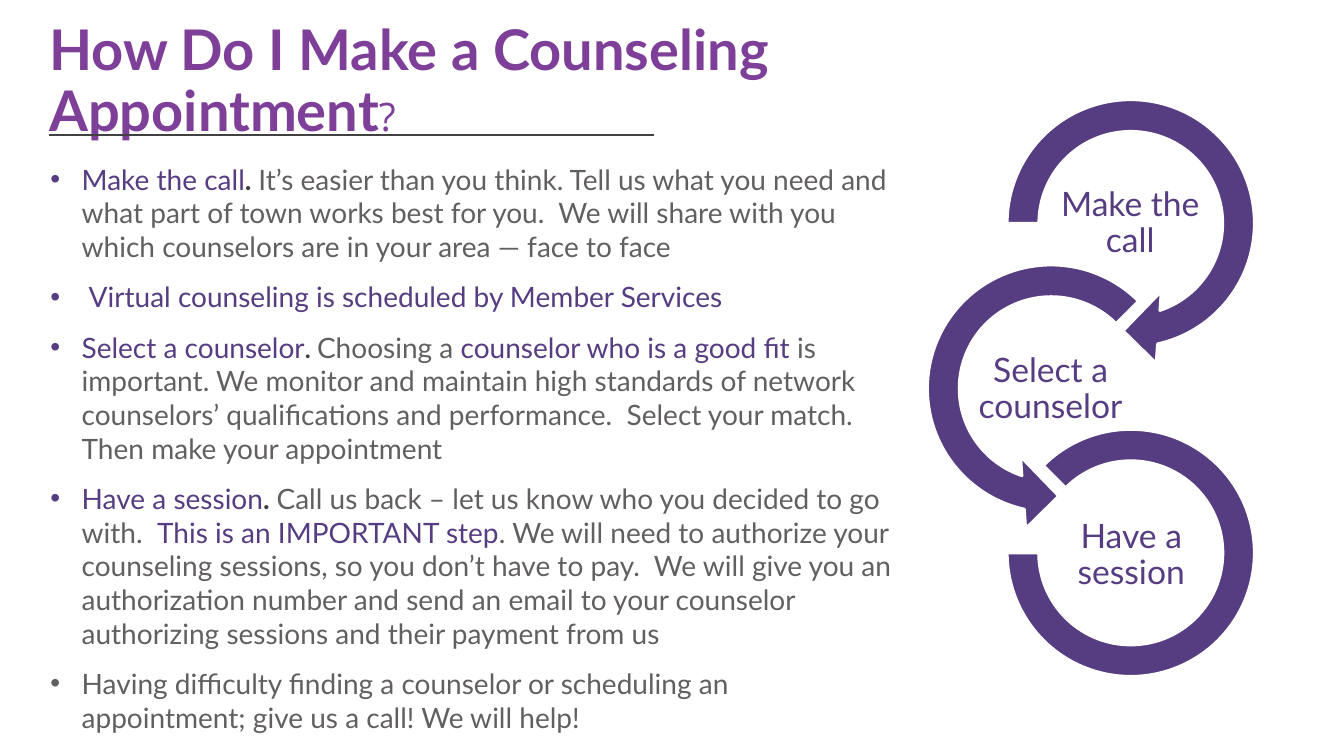
from dataclasses import dataclass

from lxml import etree
from pptx import Presentation
from pptx.dml.color import RGBColor
from pptx.enum.shapes import MSO_CONNECTOR, MSO_SHAPE
from pptx.enum.text import MSO_ANCHOR, MSO_AUTO_SIZE, PP_ALIGN
from pptx.oxml.ns import qn
from pptx.util import Inches, Pt

STRAIGHT = MSO_CONNECTOR.STRAIGHT
CIRCULAR_ARROW = MSO_SHAPE.CIRCULAR_ARROW
LEFT_CIRCULAR_ARROW = MSO_SHAPE.LEFT_CIRCULAR_ARROW
BLOCK_ARC = MSO_SHAPE.BLOCK_ARC
TOP, MIDDLE = MSO_ANCHOR.TOP, MSO_ANCHOR.MIDDLE
LEFT, CENTER = PP_ALIGN.LEFT, PP_ALIGN.CENTER
NO_AUTOFIT = MSO_AUTO_SIZE.NONE
TITLE_ONLY = 5


@dataclass(frozen=True)
class Theme:
    font: str = "Lato"
    mark_font: str = "Open Sans"
    title: RGBColor = RGBColor(0x7D, 0x3F, 0x98)
    accent: RGBColor = RGBColor(0x56, 0x3D, 0x82)
    body: RGBColor = RGBColor(0x62, 0x5F, 0x5F)
    dark: RGBColor = RGBColor(0x41, 0x41, 0x41)
    white: RGBColor = RGBColor(0xFF, 0xFF, 0xFF)
    title_size: Pt = Pt(40)
    mark_size: Pt = Pt(28)
    step_size: Pt = Pt(24)
    body_size: Pt = Pt(20)
    stop_size: Pt = Pt(18)


THEME = Theme()

# Run styles: colour, bold, size
KEY = (THEME.accent, False, THEME.body_size)
PLAIN = (THEME.body, False, THEME.body_size)
STOP = (THEME.dark, True, THEME.body_size)
SMALL_STOP = (THEME.dark, True, THEME.stop_size)

# Bullets: indent in inches, then runs of text and style
BULLETS = [
    (0.31, [
        ("Make the call", KEY), (". ", STOP),
        ("It’s easier than you think. Tell us what you need and what part of town "
         "works best for you.  We will share with you which counselors are in your "
         "area — face to face", PLAIN)]),
    (0.38, [("Virtual counseling is scheduled by Member Services", KEY)]),
    (0.31, [
        ("Select a counselor", KEY), (". ", SMALL_STOP), ("Choosing a ", PLAIN),
        ("counselor who is a good fit ", KEY),
        ("is important. We monitor and maintain high standards of network "
         "counselors’ qualifications and performance.  Select your match. Then "
         "make your appointment", PLAIN)]),
    (0.31, [
        ("Have a session", KEY), (". ", STOP),
        ("Call us back – let us know who you decided to go with.  ", PLAIN),
        ("This is an IMPORTANT step", KEY),
        (". We will need to authorize your counseling sessions, so you don’t have "
         "to pay.  We will give you an authorization number and send an email to "
         "your counselor authorizing sessions and their payment from us", PLAIN)]),
    (0.31, [("Having difficulty finding a counselor or scheduling an appointment; "
             "give us a call! We will help!", PLAIN)]),
]

# Steps: label, label left and top, ring shape, ring left, top and size, adjustments
STEPS = [
    ("Make the call", 10.42, 1.82,
     CIRCULAR_ARROW, 9.79, 0.79, 2.85, (0.11, 11.423, 45, 108, 0.125)),
    ("Select a counselor", 9.63, 3.47,
     LEFT_CIRCULAR_ARROW, 9, 2.43, 2.85, (0.11, 11.423, 63, 189, 0.125)),
    ("Have a session", 10.43, 5.12,
     BLOCK_ARC, 9.99, 4.26, 2.45, (135, 108, 0.127)),
]


def set_frame(frame, anchor, inset=0):
    frame.word_wrap = True
    frame.auto_size = NO_AUTOFIT
    frame.vertical_anchor = anchor
    frame.margin_left = frame.margin_right = Inches(inset)
    frame.margin_top = frame.margin_bottom = Inches(inset)


def add_text_box(slide, left, top, width, height, anchor, inset=0):
    box = slide.shapes.add_textbox(
        Inches(left), Inches(top), Inches(width), Inches(height))
    set_frame(box.text_frame, anchor, inset)
    return box.text_frame


def add_run(paragraph, text, font, color, bold, size):
    run = paragraph.add_run()
    run.text = text
    run.font.name = font
    run.font.color.rgb = color
    run.font.bold = bold
    run.font.size = size


def add_bullet_mark(paragraph, indent):
    properties = paragraph._p.get_or_add_pPr()
    properties.set("marL", str(Inches(indent)))
    properties.set("indent", str(-Inches(indent)))
    etree.SubElement(properties, qn("a:buFont")).set("typeface", "Arial")
    etree.SubElement(properties, qn("a:buChar")).set("char", "•")


def add_title(slide):
    title = slide.shapes.title
    title.left, title.top = Inches(0.49), Inches(0.42)
    title.width, title.height = Inches(7.76), Inches(0.8)
    set_frame(title.text_frame, MIDDLE)
    paragraph = title.text_frame.paragraphs[0]
    paragraph.alignment = LEFT
    paragraph.line_spacing = 0.9
    add_run(paragraph, "How Do I Make a Counseling Appointment",
            THEME.font, THEME.title, True, THEME.title_size)
    add_run(paragraph, "?", THEME.mark_font, THEME.title, False, THEME.mark_size)


def add_rule(slide):
    rule = slide.shapes.add_connector(
        STRAIGHT, Inches(0.49), Inches(1.34), Inches(6.49), Inches(1.34))
    rule.line.color.rgb = THEME.dark
    rule.line.width = Pt(1.5)
    etree.SubElement(rule._element.spPr, qn("a:effectLst"))


def add_bullets(slide):
    frame = add_text_box(slide, 0.5, 1.61, 8.39, 5.78, TOP)
    for index, (indent, runs) in enumerate(BULLETS):
        paragraph = frame.add_paragraph() if index else frame.paragraphs[0]
        paragraph.space_before = Pt(12)
        add_bullet_mark(paragraph, indent)
        for text, style in runs:
            add_run(paragraph, text, THEME.font, *style)


def add_ring(slide, kind, left, top, size, adjustments):
    ring = slide.shapes.add_shape(
        kind, Inches(left), Inches(top), Inches(size), Inches(size))
    for index, value in enumerate(adjustments):
        ring.adjustments[index] = value
    ring.shadow.inherit = False
    ring.fill.solid()
    ring.fill.fore_color.rgb = THEME.accent
    ring.line.color.rgb = THEME.white
    ring.line.width = Pt(2)


def add_step_label(slide, text, left, top):
    frame = add_text_box(slide, left, top, 1.58, 0.79, MIDDLE, 0.02)
    paragraph = frame.paragraphs[0]
    paragraph.text = text
    paragraph.alignment = CENTER
    paragraph.line_spacing = 0.9
    paragraph.font.name = THEME.font
    paragraph.font.size = THEME.step_size
    paragraph.font.color.rgb = THEME.accent


def main():
    presentation = Presentation()
    presentation.slide_width = Inches(13.33)
    presentation.slide_height = Inches(7.5)
    slide = presentation.slides.add_slide(presentation.slide_layouts[TITLE_ONLY])

    # Heading and body text
    add_rule(slide)
    add_title(slide)
    add_bullets(slide)

    # Chain of steps
    for label, label_left, label_top, *ring in STEPS:
        add_ring(slide, *ring)
        add_step_label(slide, label, label_left, label_top)

    presentation.save("out.pptx")


if __name__ == "__main__":
    main()
